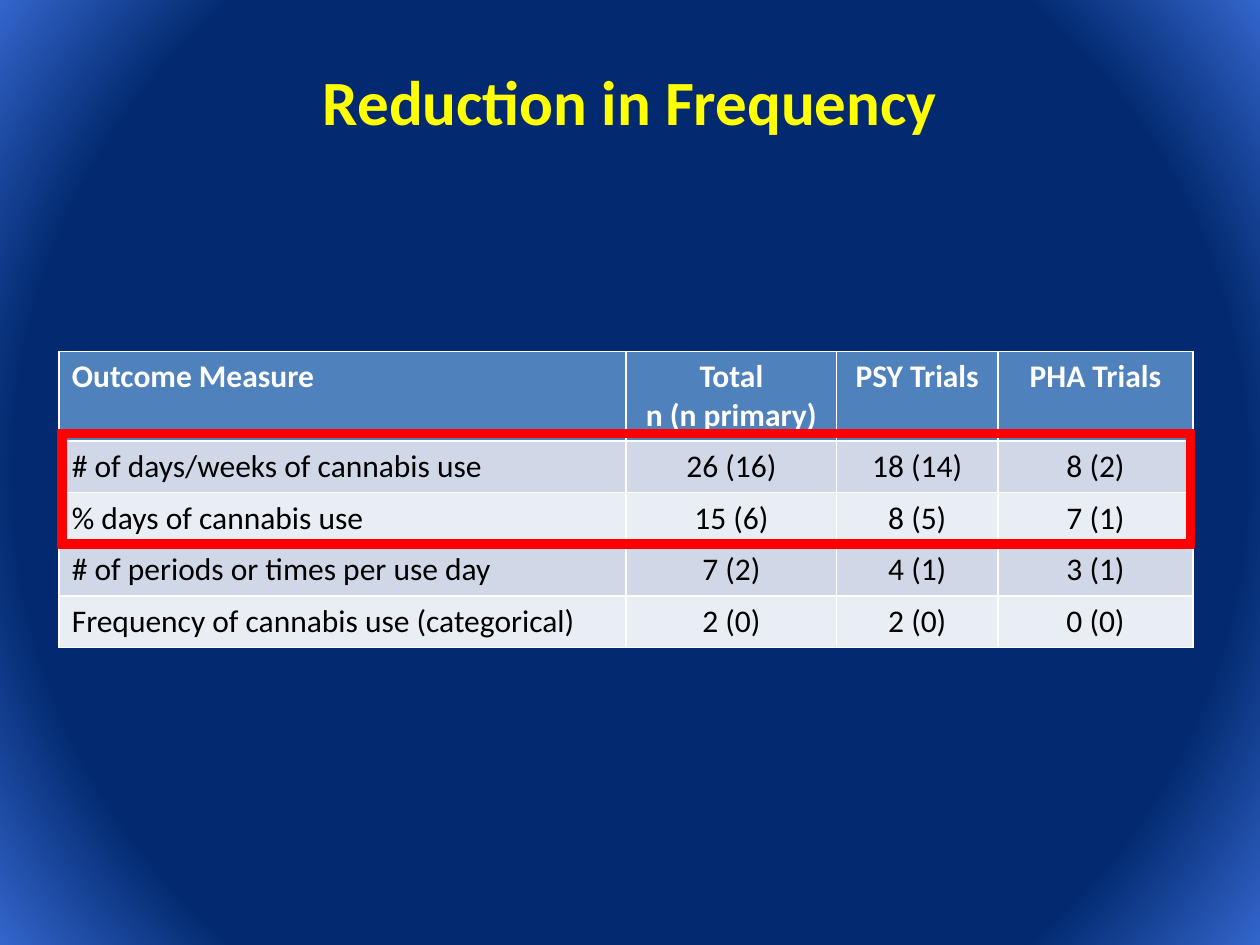
from dataclasses import dataclass

from lxml.etree import SubElement
from pptx import Presentation
from pptx.dml.color import RGBColor
from pptx.enum.shapes import MSO_SHAPE
from pptx.enum.text import MSO_ANCHOR, PP_ALIGN
from pptx.oxml.ns import qn
from pptx.slide import Slide
from pptx.table import _Cell
from pptx.util import Inches, Pt

COLORS = {
    "navy": "032A70",
    "blue": "3366CC",
    "title": "FFFF00",
    "header": "4F81BD",
    "band_dark": "D0D8E8",
    "band_light": "E9EDF4",
    "white": "FFFFFF",
    "black": "000000",
    "highlight": "FF0000",
}
FONT = "Calibri"
LEFT, WIDTH = 0.47, 9
COL_WIDTHS = (4.5, 1.67, 1.28, 1.55)
HEADER_HEIGHT, ROW_HEIGHT = 0.7, 0.41


@dataclass
class Outcome:
    measure: str
    total: str
    psy: str
    pha: str

    def values(self) -> tuple[str, ...]:
        return self.measure, self.total, self.psy, self.pha


HEADER = Outcome("Outcome Measure", "Total\nn (n primary)", "PSY Trials", "PHA Trials")
OUTCOMES = [
    Outcome("# of days/weeks of cannabis use", "26 (16)", "18 (14)", "8 (2)"),
    Outcome("% days of cannabis use", "15 (6)", "8 (5)", "7 (1)"),
    Outcome("# of periods or times per use day", "7 (2)", "4 (1)", "3 (1)"),
    Outcome("Frequency of cannabis use (categorical)", "2 (0)", "2 (0)", "0 (0)"),
]


def rgb(name: str) -> RGBColor:
    return RGBColor.from_string(COLORS[name])


def format_text(tf, size: float, color: str, bold: bool, align: PP_ALIGN) -> None:
    for p in tf.paragraphs:
        p.alignment = align
        for r in p.runs:
            r.font.name = FONT
            r.font.size = Pt(size)
            r.font.bold = bold
            r.font.color.rgb = rgb(color)


def set_background(s: Slide) -> None:
    fill = s.background.fill
    fill.gradient()
    for stop, position, color in zip(fill.gradient_stops, (0.78, 1), ("navy", "blue")):
        stop.position = position
        stop.color.rgb = rgb(color)
    grad = s._element.find(".//" + qn("a:gradFill"))
    grad.remove(grad.find(qn("a:lin")))
    circle = SubElement(grad, qn("a:path"), path="circle")
    SubElement(circle, qn("a:fillToRect"), l="50000", t="50000", r="50000", b="50000")


def add_title(s: Slide, text: str) -> None:
    title = s.shapes.title
    title.left, title.top = Inches(0.5), Inches(0.17)
    title.width, title.height = Inches(9), Inches(1.25)
    tf = title.text_frame
    tf.text = text
    tf.vertical_anchor = MSO_ANCHOR.MIDDLE
    format_text(tf, 36, "title", True, PP_ALIGN.CENTER)


def fill_cell(cell: _Cell, text: str, row: int, col: int) -> None:
    is_header = row == 0
    band = "band_dark" if row % 2 else "band_light"
    cell.fill.solid()
    cell.fill.fore_color.rgb = rgb("header" if is_header else band)
    cell.text_frame.text = text
    format_text(cell.text_frame, 18, "white" if is_header else "black", is_header,
                PP_ALIGN.CENTER if col else PP_ALIGN.LEFT)


def add_outcome_table(s: Slide, top: float) -> None:
    rows = [HEADER, *OUTCOMES]
    height = HEADER_HEIGHT + ROW_HEIGHT * len(OUTCOMES)
    table = s.shapes.add_table(len(rows), len(COL_WIDTHS), Inches(LEFT), Inches(top),
                               Inches(WIDTH), Inches(height)).table
    for column, width in zip(table.columns, COL_WIDTHS):
        column.width = Inches(width)
    for i, outcome in enumerate(rows):
        table.rows[i].height = Inches(ROW_HEIGHT if i else HEADER_HEIGHT)
        for j, text in enumerate(outcome.values()):
            fill_cell(table.cell(i, j), text, i, j)


def add_highlight(s: Slide, top: float, height: float) -> None:
    sp = s.shapes.add_shape(MSO_SHAPE.FRAME, Inches(LEFT), Inches(top),
                            Inches(WIDTH), Inches(height))
    sp.adjustments[0] = 0.05
    sp.shadow.inherit = False
    sp.fill.solid()
    sp.fill.fore_color.rgb = rgb("highlight")
    sp.line.color.rgb = rgb("highlight")
    sp.line.width = Pt(2)


def main() -> None:
    prs = Presentation()
    prs.slide_width, prs.slide_height = Inches(10), Inches(7.5)
    s = prs.slides.add_slide(prs.slide_layouts[5])
    set_background(s)
    add_title(s, "Reduction in Frequency")
    add_outcome_table(s, 2.79)
    add_highlight(s, 3.42, 0.92)
    prs.save("out.pptx")


if __name__ == "__main__":
    main()
